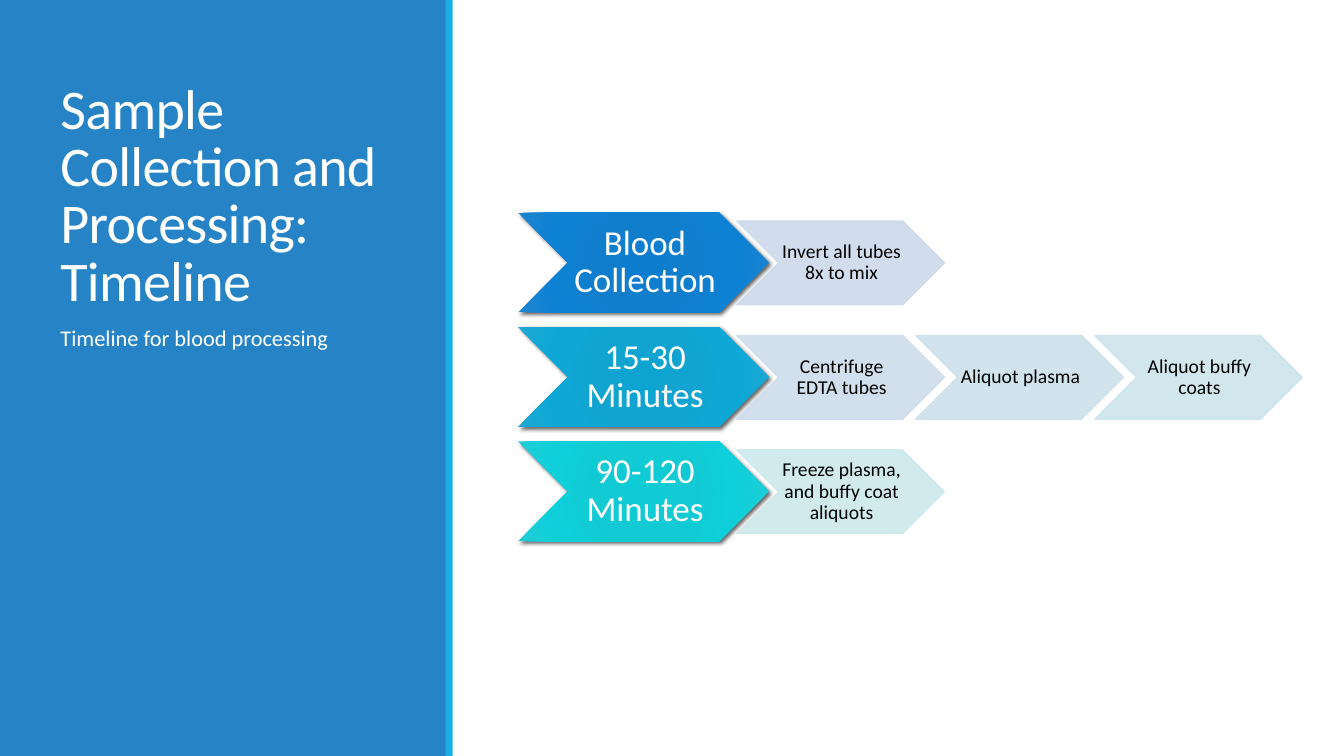
import pptx
import pptx.util
import pptx.dml.color
import pptx.enum.shapes
import pptx.enum.text
import pptx.oxml.ns
import lxml.etree

Pt = pptx.util.Pt
Kind = pptx.enum.shapes.MSO_SHAPE
Align = pptx.enum.text.PP_ALIGN
Anchor = pptx.enum.text.MSO_ANCHOR
qn = pptx.oxml.ns.qn

COLS, ROWS = 80, 45
HUES = {"panel": "2683C6", "strip": "1CADE4", "light": "FFFFFF", "dark": "000000"}
STOPS = (0, 34, 70, 100)
STAGES = [
    ("Blood Collection", ("0D7ECF", "117ECD", "0D81D4", "1E84CE"),
     [("Invert all tubes 8x to mix", "CDD9EA")]),
    ("15-30 Minutes", ("0EA4D2", "12A4D0", "0EA8D7", "1FA7D1"),
     [("Centrifuge EDTA tubes", "CDDDEB"),
      ("Aliquot plasma", "CDE1EB"),
      ("Aliquot buffy coats", "CDE5EC")]),
    ("90-120 Minutes", ("0ECBD5", "12CAD3", "0FD0DA", "20CBD4"),
     [("Freeze plasma, and buffy coat aliquots", "CDE9EC")]),
]


def rgb(hue):
    return pptx.dml.color.RGBColor.from_string(hue)


def add(parent, tag, **attrs):
    """Append an XML child with the given attributes."""
    child = lxml.etree.SubElement(parent, qn(tag))
    for name, value in attrs.items():
        child.set(name, str(value))
    return child


class Deck:
    """Holds the font, the grid and the current slide."""
    font = "Calibri"

    def __init__(self):
        self.show = pptx.Presentation()
        self.show.slide_width = pptx.util.Inches(13.333)
        self.show.slide_height = pptx.util.Inches(7.5)
        self.slide = self.show.slides.add_slide(self.show.slide_layouts[1])

    def area(self, col, row, wide, high):
        """Turn grid columns and rows into lengths."""
        x, y = self.show.slide_width / COLS, self.show.slide_height / ROWS
        return [round(n) for n in (col * x, row * y, wide * x, high * y)]

    def fill(self, shape, text, align, anchor, lead):
        """Set the shape's text and return its paragraph."""
        frame = shape.text_frame
        frame.text = text
        frame.word_wrap = True
        frame.auto_size = pptx.enum.text.MSO_AUTO_SIZE.NONE
        frame.vertical_anchor = anchor
        para = frame.paragraphs[0]
        para.alignment = align
        para.line_spacing = lead
        para.space_before = Pt(0)
        return para

    def style(self, para, size, hue):
        para.font.name = self.font
        para.font.size = Pt(size)
        para.font.color.rgb = rgb(HUES[hue])

    def shape(self, kind, area):
        shape = self.slide.shapes.add_shape(kind, *self.area(*area))
        shape.shadow.inherit = False
        shape.line.fill.background()
        return shape

    def bar(self, hue, *area):
        shape = self.shape(Kind.RECTANGLE, area)
        shape.fill.solid()
        shape.fill.fore_color.rgb = rgb(HUES[hue])

    def hold(self, slot, text, size, anchor, lead, *area):
        """Move a placeholder to its area and fill it."""
        shape = self.slide.placeholders[slot]
        shape.left, shape.top, shape.width, shape.height = self.area(*area)
        para = self.fill(shape, text, Align.LEFT, anchor, lead)
        props = para._p.get_or_add_pPr()
        props.set("marL", "0")
        props.set("indent", "0")
        add(props, "a:buNone")
        self.style(para, size, "light")
        return para

    def arrow(self, text, size, hue, pad, area):
        """Add a chevron with centred text."""
        shape = self.shape(Kind.CHEVRON, area)
        para = self.fill(shape, text, Align.CENTER, Anchor.MIDDLE, 0.9)
        self.style(para, size, hue)
        frame = shape.text_frame
        frame.margin_left = pptx.util.Inches(pad)
        frame.margin_right = 0
        frame.margin_top = frame.margin_bottom = pptx.util.Inches(pad / 2)
        return shape

    def stage(self, text, tones, *area):
        shape = self.arrow(text, 25, "light", 0.03, area)
        shape.fill.gradient()
        props = shape.element.spPr
        grad = props.find(qn("a:gradFill"))
        for child in list(grad):
            grad.remove(child)
        stops = add(grad, "a:gsLst")
        for share, tone in zip(STOPS, tones):
            add(add(stops, "a:gs", pos=share * 1000), "a:srgbClr", val=tone)
        way = add(grad, "a:path")
        way.set("path", "circle")
        add(way, "a:fillToRect", l=100000, t=100000, r=100000, b=100000)
        cast = add(props.find(qn("a:effectLst")), "a:outerShdw", blurRad=int(Pt(3)),
                   dist=int(Pt(2)), dir=45 * 60000, algn="ctr", rotWithShape=0)
        add(add(cast, "a:srgbClr", val=HUES["dark"]), "a:alpha", val=60000)

    def step(self, text, tone, *area):
        shape = self.arrow(text, 14, "dark", 0.02, area)
        shape.line.width = Pt(1)
        for paint in (shape.fill, shape.line.fill):
            paint.solid()
            paint.fore_color.rgb = rgb(tone)
        for color in list(shape.element.spPr.iter(qn("a:srgbClr"))):
            add(color, "a:alpha", val=90000)


def main():
    deck = Deck()
    deck.bar("panel", 0, 0, 26.58, ROWS)
    deck.bar("strip", 26.52, 0, 0.42, ROWS)
    title = deck.hold(0, "Sample Collection and Processing: Timeline", 40,
                      Anchor.BOTTOM, 0.85, 3, 3.9, 21, 15)
    title.runs[0]._r.get_or_add_rPr().set("spc", "-50")
    deck.hold(1, "Timeline for blood processing", 16, Anchor.TOP, 0.9,
              3, 19.2, 21, 22.2)
    # Placeholders sit above the panel
    tree = deck.slide.shapes.element
    for holder in list(deck.slide.placeholders):
        tree.append(holder.element)

    for i, (name, tones, steps) in enumerate(STAGES):
        row = 12.66 + i * 6.81
        deck.stage(name, tones, 30.84, row, 14.94, 5.94)
        for j, (text, tone) in enumerate(steps):
            deck.step(text, tone, 43.86 + j * 10.65, row + 0.5, 12.36, 4.98)
    deck.show.save("out.pptx")


if __name__ == "__main__":
    main()
